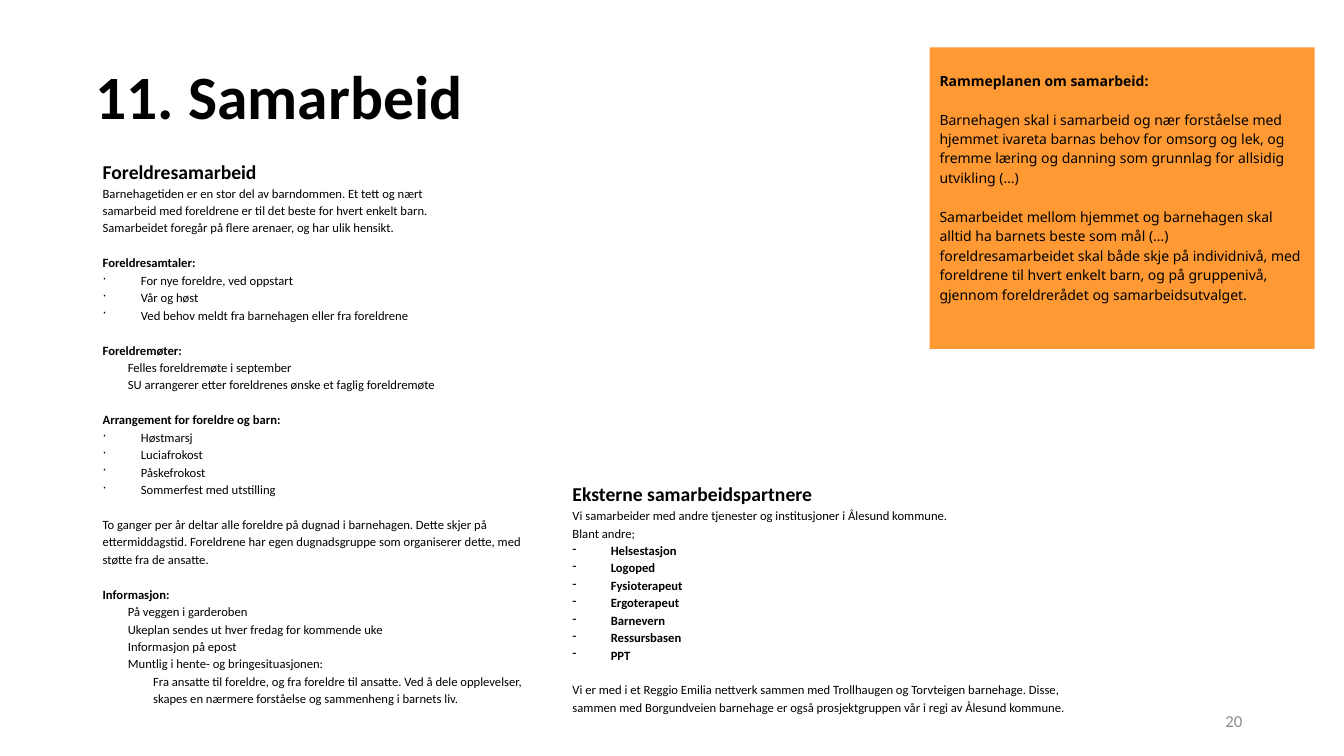
import pptx
import pptx.util
import pptx.dml.color
import pptx.enum.shapes
import pptx.enum.text
import pptx.oxml.ns
import lxml.etree
from pptx.util import Inches, Pt

BLACK = pptx.dml.color.RGBColor(0x00, 0x00, 0x00)
WHITE = pptx.dml.color.RGBColor(0xFF, 0xFF, 0xFF)
GRAY = pptx.dml.color.RGBColor(0x8C, 0x8C, 0x8C)
ORANGE = pptx.dml.color.RGBColor(0xFF, 0x99, 0x33)

ALIGN = pptx.enum.text.PP_ALIGN
ANCHOR = pptx.enum.text.MSO_ANCHOR
BODY_SIZE = 9
BODY_GAP = 12.5
QUOTE_LINE = 13.9

PARENT_SECTIONS = [
    ("Foreldresamtaler:", "·", [
        "For nye foreldre, ved oppstart",
        "Vår og høst",
        "Ved behov meldt fra barnehagen eller fra foreldrene",
    ]),
    ("Foreldremøter:", None, [
        "Felles foreldremøte i september",
        "SU arrangerer etter foreldrenes ønske et faglig foreldremøte",
    ]),
    ("Arrangement for foreldre og barn:", "·", [
        "Høstmarsj",
        "Luciafrokost",
        "Påskefrokost",
        "Sommerfest med utstilling",
    ]),
]
PARENT_INTRO = [
    "Barnehagetiden er en stor del av barndommen. Et tett og nært",
    "samarbeid med foreldrene er til det beste for hvert enkelt barn.",
    "Samarbeidet foregår på flere arenaer, og har ulik hensikt.",
]
VOLUNTEER_WORK = (
    "To ganger per år deltar alle foreldre på dugnad i barnehagen. Dette skjer på "
    "ettermiddagstid. Foreldrene har egen dugnadsgruppe som organiserer dette, med "
    "støtte fra de ansatte."
)
INFORMATION = [
    "På veggen i garderoben",
    "Ukeplan sendes ut hver fredag for kommende uke",
    "Informasjon på epost",
    "Muntlig i hente- og bringesituasjonen:",
]
DIALOGUE = (
    "Fra ansatte til foreldre, og fra foreldre til ansatte. Ved å dele opplevelser, "
    "skapes en nærmere forståelse og sammenheng i barnets liv."
)
PARTNER_INTRO = [
    "Vi samarbeider med andre tjenester og institusjoner i Ålesund kommune.",
    "Blant andre;",
]
PARTNERS = ["Helsestasjon", "Logoped", "Fysioterapeut", "Ergoterapeut",
            "Barnevern", "Ressursbasen", "PPT"]
NETWORK = (
    "Vi er med i et Reggio Emilia nettverk sammen med Trollhaugen og Torvteigen "
    "barnehage. Disse, sammen med Borgundveien barnehage er også prosjektgruppen vår "
    "i regi av Ålesund kommune."
)
QUOTES = [
    "Barnehagen skal i samarbeid og nær forståelse med hjemmet ivareta barnas behov "
    "for omsorg og lek, og fremme læring og danning som grunnlag for allsidig "
    "utvikling (…)",
    "Samarbeidet mellom hjemmet og barnehagen skal alltid ha barnets beste som mål (…) "
    "foreldresamarbeidet skal både skje på individnivå, med foreldrene til hvert "
    "enkelt barn, og på gruppenivå, gjennom foreldrerådet og samarbeidsutvalget.",
]


def add_label(slide, left, top, width, height):
    label = slide.shapes.add_textbox(Inches(left), Inches(top), Inches(width), Inches(height))
    label.text_frame.word_wrap = True
    label.text_frame.vertical_anchor = ANCHOR.MIDDLE
    return label.text_frame


def add_panel(slide, left, top, width, height, color):
    panel = slide.shapes.add_shape(pptx.enum.shapes.MSO_SHAPE.RECTANGLE, Inches(left),
                                   Inches(top), Inches(width), Inches(height))
    panel.shadow.inherit = False
    panel.fill.solid()
    panel.fill.fore_color.rgb = color
    panel.line.fill.background()
    panel.text_frame.word_wrap = True
    panel.text_frame.vertical_anchor = ANCHOR.TOP
    return panel.text_frame


def add_line(frame, text, size=BODY_SIZE, bold=False, font="Calibri", color=BLACK,
             align=ALIGN.LEFT, spacing=1.15, gap=0):
    """Append a paragraph, reusing the empty one of a new frame."""
    first = frame.paragraphs[0]
    line = frame.add_paragraph() if first.runs else first
    line.alignment = align
    line.line_spacing = spacing
    line.space_before = Pt(gap)
    run = line.add_run()
    run.text = text
    run.font.size = Pt(size)
    run.font.bold = bold
    run.font.name = font
    run.font.color.rgb = color
    return line


def indent(line, left, bullet=None):
    """Indent the paragraph; a bullet hangs in the indent."""
    properties = line._p.get_or_add_pPr()
    properties.set("marL", str(Inches(left)))
    properties.set("indent", str(Inches(-left if bullet else 0)))
    if bullet:
        mark = lxml.etree.SubElement(properties, pptx.oxml.ns.qn("a:buChar"))
        mark.set("char", bullet)


def add_items(frame, items, bullet=None, bold=False):
    for item in items:
        indent(add_line(frame, item, bold=bold), 0.38 if bullet else 0.25, bullet)


def add_parents(slide):
    parents = add_panel(slide, 0.92, 1.5, 4.47, 5.68, WHITE)
    add_line(parents, "Foreldresamarbeid", size=14, bold=True)
    for sentence in PARENT_INTRO:
        add_line(parents, sentence)
    for heading, bullet, items in PARENT_SECTIONS:
        add_line(parents, heading, bold=True, gap=BODY_GAP)
        add_items(parents, items, bullet)
    add_line(parents, VOLUNTEER_WORK, gap=BODY_GAP)
    add_line(parents, "Informasjon:", bold=True, gap=BODY_GAP)
    add_items(parents, INFORMATION)
    indent(add_line(parents, DIALOGUE), 0.5)


def add_partners(slide):
    partners = add_panel(slide, 5.58, 4.7, 5.37, 2.65, WHITE)
    add_line(partners, "Eksterne samarbeidspartnere", size=14, bold=True)
    for sentence in PARTNER_INTRO:
        add_line(partners, sentence)
    add_items(partners, PARTNERS, "-", bold=True)
    add_line(partners, NETWORK, gap=BODY_GAP)


def add_framework_plan(slide):
    plan = add_panel(slide, 9.22, 0.47, 3.82, 2.99, ORANGE)
    plan.margin_top = Inches(0.22)
    style = {"size": 10, "font": "Noto Sans", "spacing": Pt(QUOTE_LINE)}
    add_line(plan, "Rammeplanen om samarbeid:", bold=True, **style)
    for quote in QUOTES:
        add_line(plan, quote, gap=QUOTE_LINE, **style)


def main():
    deck = pptx.Presentation()
    deck.slide_width = Inches(13.33)
    deck.slide_height = Inches(7.5)
    slide = deck.slides.add_slide(deck.slide_layouts[6])
    title = add_label(slide, 0.85, 0.26, 8.62, 1.45)
    add_line(title, "11. Samarbeid", size=44, bold=True, spacing=0.9)
    page_number = add_label(slide, 9.42, 6.95, 3, 0.4)
    add_line(page_number, "20", size=12, color=GRAY, align=ALIGN.RIGHT, spacing=1.0)
    add_parents(slide)
    add_partners(slide)
    add_framework_plan(slide)
    deck.save("out.pptx")


if __name__ == "__main__":
    main()
